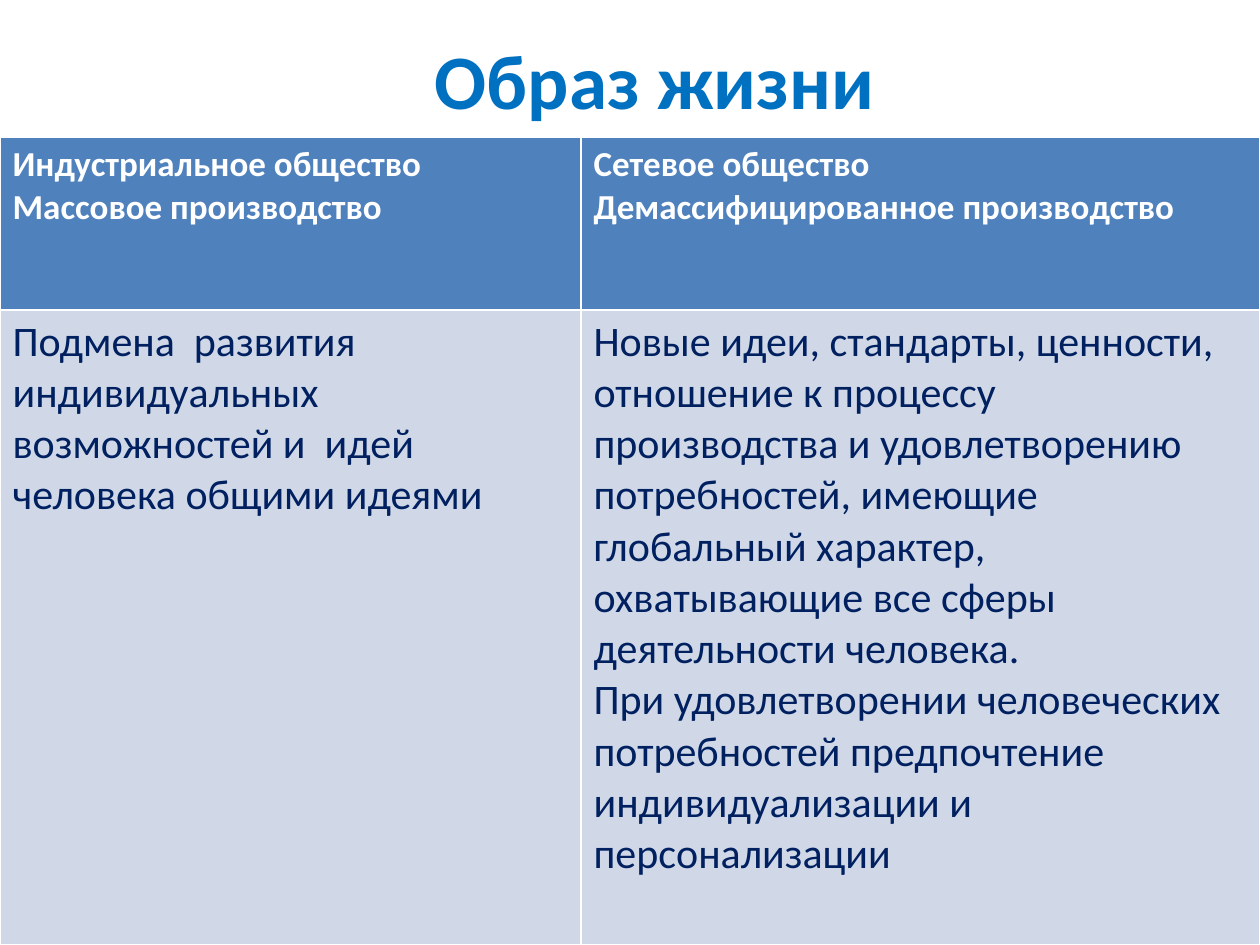
import dataclasses

import pptx
import pptx.dml.color
import pptx.enum.text
import pptx.util

EMU_PER_PX = 914400 / 126
SLIDE_WIDTH, SLIDE_HEIGHT = 1260, 945
TABLE_TOP = 137
COLUMN_WIDTHS = (581, 679)
FONT = "Calibri"


@dataclasses.dataclass(frozen=True)
class TextStyle:
    size: int
    color: str
    bold: bool = False


@dataclasses.dataclass(frozen=True)
class TableRow:
    height: int
    fill: str
    style: TextStyle
    cells: tuple[tuple[str, ...], ...]


TITLE_STYLE = TextStyle(44, "0070C0", bold=True)
ROWS = (
    TableRow(
        173, "4F81BD", TextStyle(20, "FFFFFF", bold=True),
        (
            ("Индустриальное общество", "Массовое производство"),
            ("Сетевое общество", "Демассифицированное производство"),
        ),
    ),
    TableRow(
        635, "D0D8E8", TextStyle(24, "002060"),
        (
            ("Подмена  развития индивидуальных возможностей и  идей "
             "человека общими идеями",),
            ("Новые идеи, стандарты, ценности, отношение к процессу "
             "производства и удовлетворению потребностей, имеющие "
             "глобальный характер, охватывающие все сферы "
             "деятельности человека.",
             "При удовлетворении человеческих потребностей предпочтение "
             "индивидуализации и персонализации"),
        ),
    ),
)


def px(length: int) -> pptx.util.Emu:
    return pptx.util.Emu(round(length * EMU_PER_PX))


def rgb(value: str) -> pptx.dml.color.RGBColor:
    return pptx.dml.color.RGBColor.from_string(value)


def write_paragraphs(frame, lines: tuple[str, ...], style: TextStyle) -> None:
    for index, line in enumerate(lines):
        paragraph = frame.add_paragraph() if index else frame.paragraphs[0]
        run = paragraph.add_run()
        run.text = line
        run.font.name = FONT
        run.font.size = pptx.util.Pt(style.size)
        run.font.bold = style.bold
        run.font.color.rgb = rgb(style.color)


def add_title(slide) -> None:
    title = slide.shapes.title
    title.left, title.top = px(88), px(0)
    title.width, title.height = px(1134), px(158)
    frame = title.text_frame
    frame.vertical_anchor = pptx.enum.text.MSO_ANCHOR.MIDDLE
    write_paragraphs(frame, ("Образ жизни",), TITLE_STYLE)
    frame.paragraphs[0].alignment = pptx.enum.text.PP_ALIGN.CENTER


def add_comparison(slide) -> None:
    """Add the society table; its default style supplies the white borders."""
    comparison = slide.shapes.add_table(
        len(ROWS), len(COLUMN_WIDTHS), px(0), px(TABLE_TOP),
        px(sum(COLUMN_WIDTHS)), px(sum(row.height for row in ROWS)),
    ).table
    for column, width in zip(comparison.columns, COLUMN_WIDTHS):
        column.width = px(width)
    for table_row, row in zip(comparison.rows, ROWS):
        table_row.height = px(row.height)
        for cell, lines in zip(table_row.cells, row.cells):
            cell.fill.solid()
            cell.fill.fore_color.rgb = rgb(row.fill)
            write_paragraphs(cell.text_frame, lines, row.style)


def main() -> None:
    presentation = pptx.Presentation()
    presentation.slide_width = px(SLIDE_WIDTH)
    presentation.slide_height = px(SLIDE_HEIGHT)
    slide = presentation.slides.add_slide(presentation.slide_layouts[5])
    add_title(slide)
    add_comparison(slide)
    presentation.save("out.pptx")


if __name__ == "__main__":
    main()
